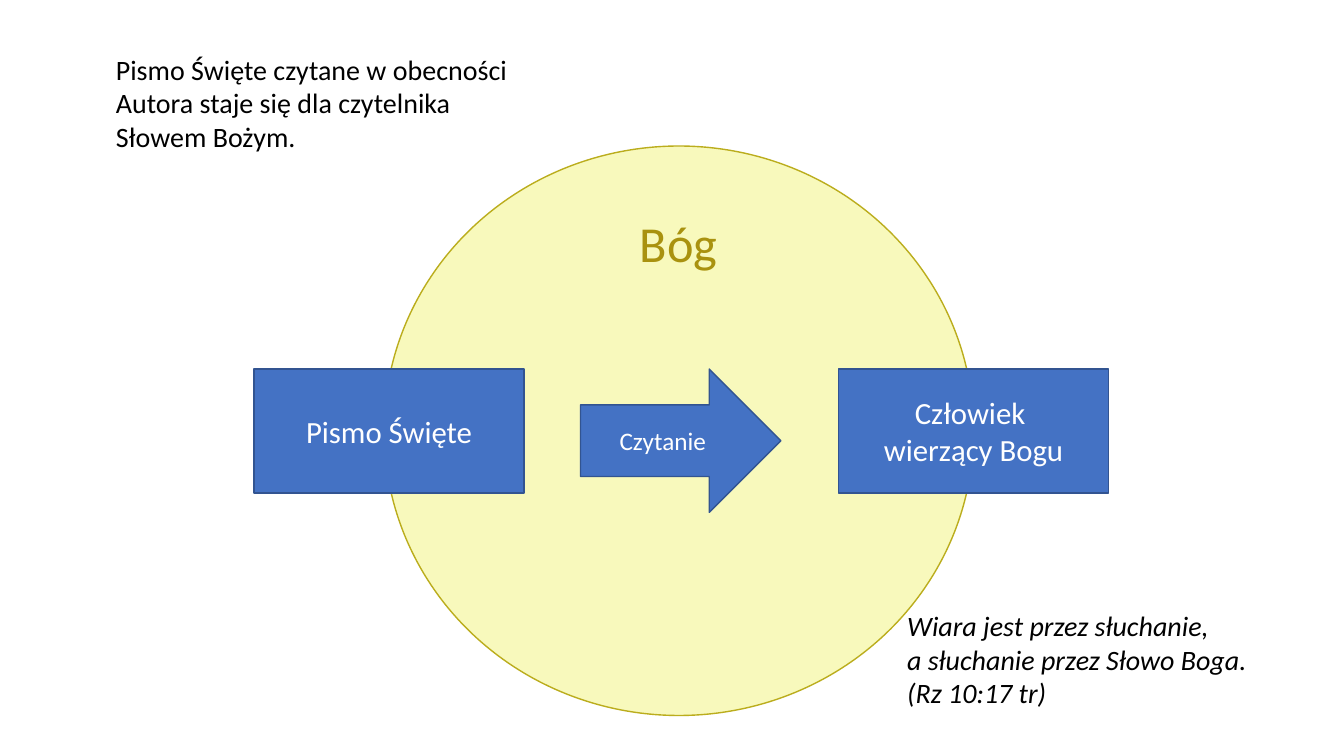
from pptx import Presentation
from pptx.dml.color import RGBColor
from pptx.enum.shapes import MSO_SHAPE
from pptx.enum.text import MSO_ANCHOR, PP_ALIGN
from pptx.util import Cm, Pt

OVAL = MSO_SHAPE.OVAL
RECT = MSO_SHAPE.RECTANGLE
ARROW = MSO_SHAPE.RIGHT_ARROW
TOP, MIDDLE = MSO_ANCHOR.TOP, MSO_ANCHOR.MIDDLE
LEFT, CENTER = PP_ALIGN.LEFT, PP_ALIGN.CENTER

BLACK = RGBColor(0x00, 0x00, 0x00)
WHITE = RGBColor(0xFF, 0xFF, 0xFF)
BLUE = RGBColor(0x44, 0x72, 0xC4)
NAVY = RGBColor(0x32, 0x54, 0x91)
CREAM = RGBColor(0xF8, 0xF9, 0xBC)
OLIVE = RGBColor(0xBB, 0xAD, 0x1D)
GOLD = RGBColor(0xA9, 0x92, 0x0F)


class Board:
    font = "Calibri"

    def __init__(self, slide):
        self.slide = slide

    def letter(self, shape, text, size, color, align, anchor, italic=False):
        frame = shape.text_frame
        frame.word_wrap = True
        frame.vertical_anchor = anchor
        frame.text = text
        for par in frame.paragraphs:
            par.alignment = align
            par.font.name = self.font
            par.font.size = Pt(size)
            par.font.italic = italic
            par.font.color.rgb = color

    def shape(self, kind, x, y, w, h, fill, line):
        shape = self.slide.shapes.add_shape(kind, Cm(x), Cm(y), Cm(w), Cm(h))
        shape.shadow.inherit = False
        shape.fill.solid()
        shape.fill.fore_color.rgb = fill
        shape.line.color.rgb = line
        shape.line.width = Pt(1)
        return shape

    def block(self, kind, x, y, w, h, text, size):
        shape = self.shape(kind, x, y, w, h, BLUE, NAVY)
        self.letter(shape, text, size, WHITE, CENTER, MIDDLE)

    def label(self, x, y, w, h, text, size=20, color=BLACK, align=LEFT, italic=False):
        box = self.slide.shapes.add_textbox(Cm(x), Cm(y), Cm(w), Cm(h))
        self.letter(box, text, size, color, align, TOP, italic)


def main():
    deck = Presentation()
    deck.slide_width, deck.slide_height = Cm(33.87), Cm(19.05)
    board = Board(deck.slides.add_slide(deck.slide_layouts[6]))

    board.shape(OVAL, 9.68, 3.68, 14.86, 14.35, CREAM, OLIVE)
    board.label(11.86, 5.21, 10.49, 3.28, "Bóg", 36, GOLD, CENTER)
    board.label(2.67, 1.19, 11.35, 2.82,
                "Pismo Święte czytane w obecności Autora staje się dla czytelnika Słowem Bożym.")

    row = 9.3
    for x, text in ((6.4, "Pismo Święte"), (21.13, "Człowiek \vwierzący Bogu")):
        board.block(RECT, x, row, 6.81, 3.12, text, 22)
    board.block(ARROW, 14.63, row, 5.05, 3.61, "Czytanie", 18)

    board.label(22.61, 15.21, 10.41, 2.82,
                "Wiara jest przez słuchanie,\va słuchanie przez Słowo Boga. \v(Rz 10:17 tr)",
                italic=True)
    deck.save("out.pptx")


if __name__ == "__main__":
    main()
